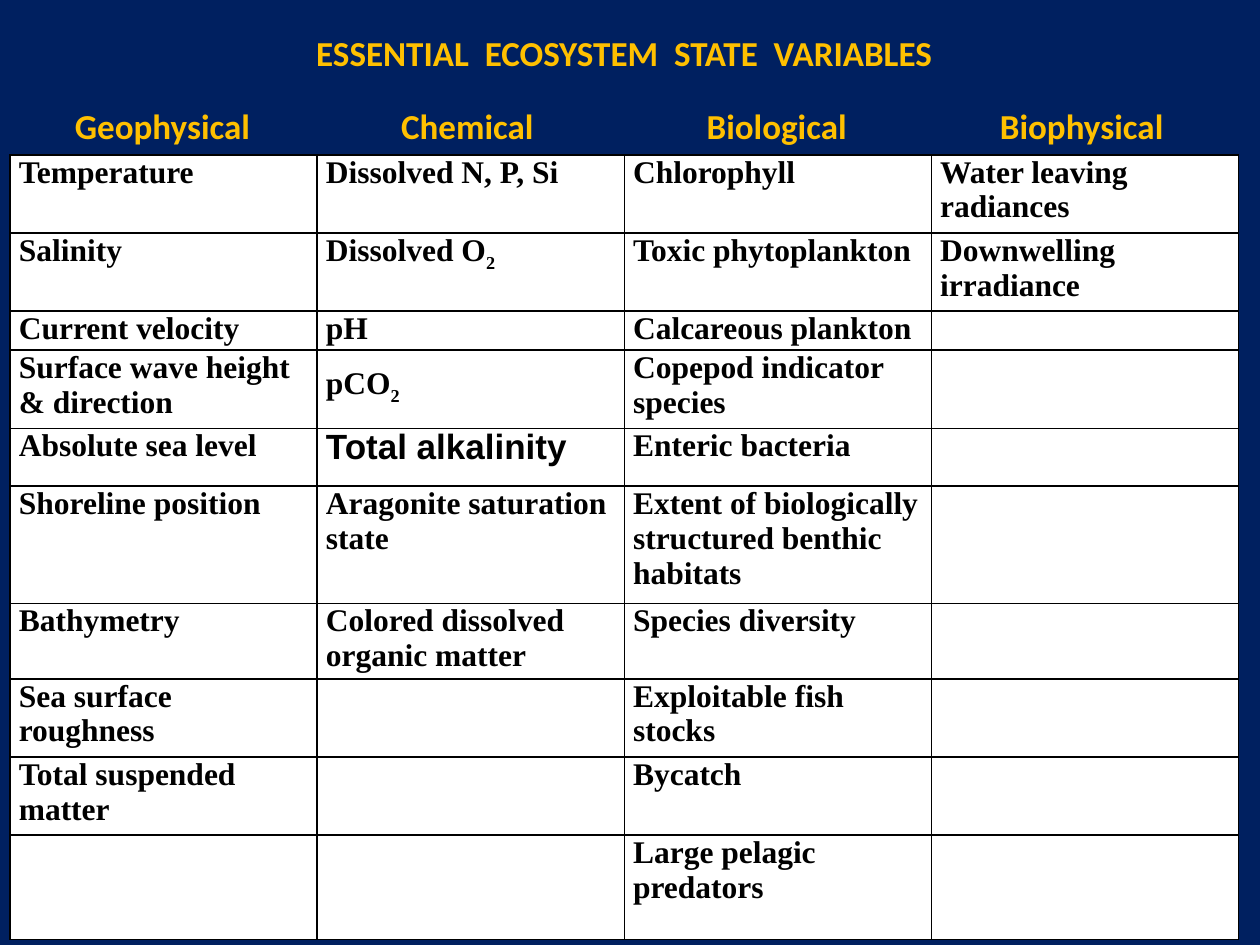
from dataclasses import dataclass

from lxml.etree import SubElement
from pptx import Presentation
from pptx.dml.color import RGBColor as RGB
from pptx.enum.text import MSO_ANCHOR as ANCHOR, MSO_AUTO_SIZE as AUTO, PP_ALIGN as ALIGN
from pptx.oxml.ns import qn
from pptx.util import Inches, Pt


@dataclass(frozen=True)
class Theme:
    navy: RGB = RGB.from_string("002060")
    gold: RGB = RGB.from_string("FFC000")
    paper: RGB = RGB.from_string("FFFFFF")
    ink: RGB = RGB.from_string("000000")
    heading_size: Pt = Pt(20)
    cell_size: Pt = Pt(18)
    rule: Pt = Pt(1)


T = Theme()
HEADING = {"name": "Calibri", "size": T.heading_size, "bold": True}
CELL = {"name": "Times New Roman", "size": T.cell_size, "bold": True}
CELL_OVERRIDES = {"Total alkalinity": {"name": "Arial", "size": T.heading_size}}

TITLE = "ESSENTIAL  ECOSYSTEM  STATE  VARIABLES"
# heading, left, width
HEADINGS = [
    ("Geophysical", 0.08, 2.42),
    ("Chemical", 2.5, 2.42),
    ("Biological", 5, 2.33),
    ("Biophysical", 7.42, 2.33),
]
# row height, then one text per column; "_" starts a subscript
ROWS = [
    (0.62, "Temperature", "Dissolved N, P, Si", "Chlorophyll", "Water leaving radiances"),
    (0.62, "Salinity", "Dissolved O_2", "Toxic phytoplankton", "Downwelling irradiance"),
    (0.31, "Current velocity", "pH", "Calcareous plankton", ""),
    (0.62, "Surface wave height & direction", "pCO_2", "Copepod indicator species", ""),
    (0.46, "Absolute sea level", "Total alkalinity", "Enteric bacteria", ""),
    (0.93, "Shoreline position", "Aragonite saturation state",
     "Extent of biologically structured benthic habitats", ""),
    (0.6, "Bathymetry", "Colored dissolved organic matter", "Species diversity", ""),
    (0.62, "Sea surface roughness", "", "Exploitable fish stocks", ""),
    (0.62, "Total suspended matter", "", "Bycatch", ""),
    (0.83, "", "", "Large pelagic predators", ""),
]
LOWERED = {"pCO_2": Inches(0.13)}


def set_font(font, formats, color):
    for name, value in formats.items():
        setattr(font, name, value)
    font.color.rgb = color


def set_box(sp, left, top, width, height):
    sp.left, sp.top, sp.width, sp.height = map(Inches, (left, top, width, height))


def write_heading(sp, text):
    tf = sp.text_frame
    tf.word_wrap, tf.auto_size = True, AUTO.NONE
    tf.vertical_anchor = ANCHOR.MIDDLE
    p = tf.paragraphs[0]
    p.alignment = ALIGN.CENTER
    r = p.add_run()
    r.text = text
    set_font(r.font, HEADING, T.gold)


def add_title(slide, left, top, width, height):
    sp = slide.shapes.title
    set_box(sp, left, top, width, height)
    sp.fill.solid()
    sp.fill.fore_color.rgb = T.navy
    write_heading(sp, TITLE)


def add_headings(slide, top, height):
    for text, left, width in HEADINGS:
        box = map(Inches, (left, top, width, height))
        write_heading(slide.shapes.add_textbox(*box), text)


def add_borders(cell):
    tc_pr = cell._tc.get_or_add_tcPr()
    for side in ("lnL", "lnR", "lnT", "lnB"):
        ln = SubElement(tc_pr, qn(f"a:{side}"), w=str(int(T.rule)))
        fill = SubElement(ln, qn("a:solidFill"))
        SubElement(fill, qn("a:srgbClr"), val=str(T.ink))


def fill_cell(cell, text):
    cell.margin_left = cell.margin_right = Inches(0.07)
    cell.margin_top = LOWERED.get(text, 0)
    cell.margin_bottom = 0
    add_borders(cell)
    cell.fill.solid()
    cell.fill.fore_color.rgb = T.paper
    if not text:
        return
    formats = CELL | CELL_OVERRIDES.get(text, {})
    p = cell.text_frame.paragraphs[0]
    for i, part in enumerate(text.split("_")):
        r = p.add_run()
        r.text = part
        set_font(r.font, formats, T.ink)
        if i:
            r._r.get_or_add_rPr().set("baseline", "-25000")


def add_variables_table(slide, left, top, width):
    height = sum(row[0] for row in ROWS)
    box = map(Inches, (left, top, width, height))
    table = slide.shapes.add_table(len(ROWS), len(HEADINGS), *box).table
    table.first_row = table.horz_banding = False
    for row, (row_height, *texts) in zip(table.rows, ROWS):
        row.height = Inches(row_height)
        for cell, text in zip(row.cells, texts):
            fill_cell(cell, text)


def main():
    prs = Presentation()
    prs.slide_width, prs.slide_height = Inches(10), Inches(7.5)
    slide = prs.slides.add_slide(prs.slide_layouts[5])
    slide.background.fill.solid()
    slide.background.fill.fore_color.rgb = T.navy
    add_variables_table(slide, 0.08, 1.23, 9.75)
    add_title(slide, 0.08, 0.17, 9.75, 0.5)
    add_headings(slide, 0.75, 0.5)
    prs.save("out.pptx")


if __name__ == "__main__":
    main()
